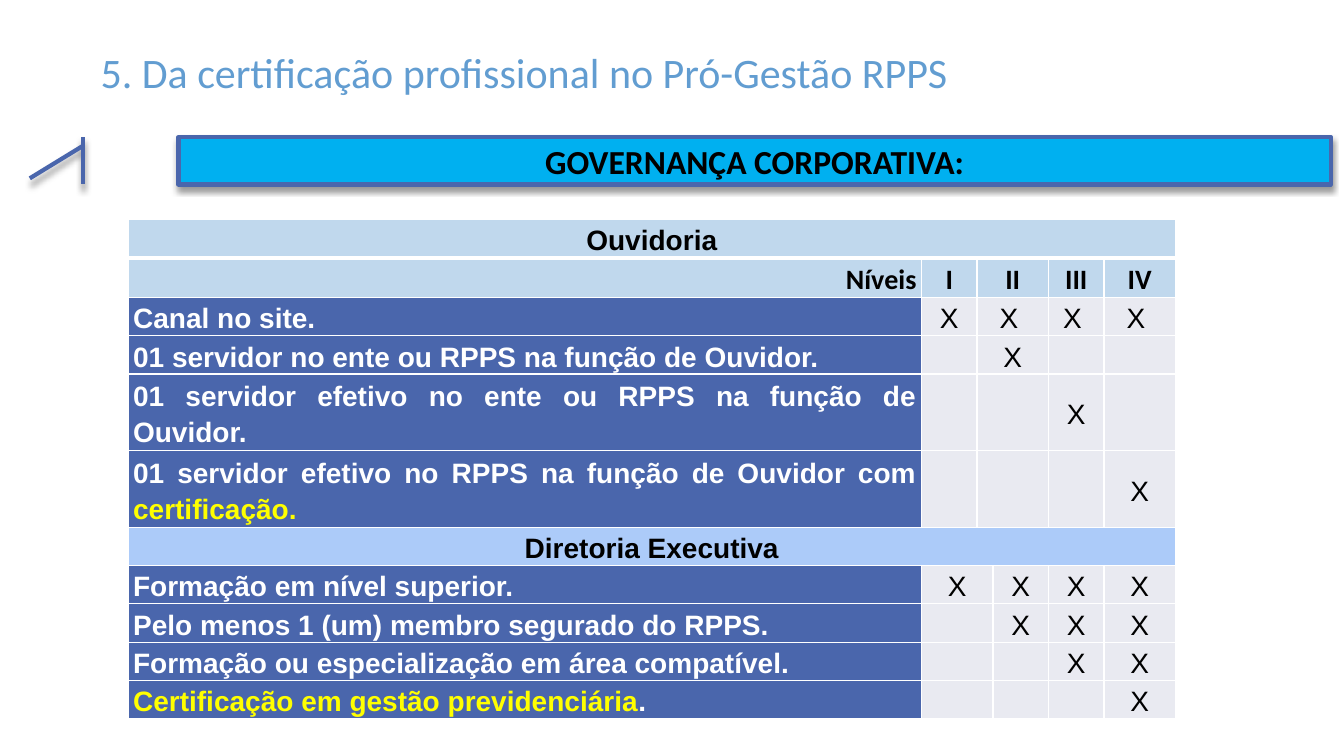
from lxml.etree import SubElement
from pptx import Presentation
from pptx.dml.color import RGBColor
from pptx.enum.shapes import MSO_SHAPE
from pptx.enum.text import MSO_ANCHOR, PP_ALIGN
from pptx.oxml.ns import qn
from pptx.util import Inches, Pt

BLACK = RGBColor(0x00, 0x00, 0x00)
WHITE = RGBColor(0xFF, 0xFF, 0xFF)
YELLOW = RGBColor(0xFF, 0xFF, 0x00)
NAVY = RGBColor(0x4A, 0x66, 0xAC)
CYAN = RGBColor(0x00, 0xB0, 0xF0)
SKY = RGBColor(0x62, 0x9D, 0xD1)
PALE = RGBColor(0xC0, 0xD8, 0xED)
LILAC = RGBColor(0xAC, 0xCB, 0xF9)
GREY = RGBColor(0xE9, 0xEA, 0xF1)

# Content: label runs, then the mark under each level
TITLE = "5. Da certificação profissional no Pró-Gestão RPPS"
BANNER = "GOVERNANÇA CORPORATIVA:"
LEVELS = ["I", "II", "III", "IV"]
OMBUDS = [
    ([("Canal no site.", WHITE)], ["X", "X ", "X ", "X "]),
    ([("01 servidor no ente ou RPPS na função de Ouvidor.", WHITE)],
     ["", "X", "", ""]),
    ([("01 servidor efetivo no ente ou RPPS na função de Ouvidor.", WHITE)],
     ["", "", "X", ""]),
    ([("01 servidor efetivo no RPPS na função de Ouvidor com ", WHITE),
      ("certificação.", YELLOW)], ["", "", "", "X"]),
]
BOARD = [
    ([("Formação em nível superior.", WHITE)], ["X", "X", "X", "X"]),
    ([("Pelo menos 1 (um) membro segurado do RPPS.", WHITE)],
     ["", "X", "X", "X"]),
    ([("Formação ou especialização em área compatível.", WHITE)],
     ["", "", "X", "X"]),
    ([("Certificação em gestão previdenciária", YELLOW), (".", WHITE)],
     ["", "", "", "X"]),
]

# Grid: levels I and II share columns 1 to 3 differently in each section
COLS = [7.87, 0.55, 0.16, 0.55, 0.55, 0.71]
UPPER = [(1, 1), (2, 3), (4, 4), (5, 5)]
LOWER = [(1, 2), (3, 3), (4, 4), (5, 5)]
ROW = 0.38
TALL = {4, 5}
COUNT = 3 + len(OMBUDS) + len(BOARD)


def write(para, runs, size, face, bold, align):
    para.alignment = align
    for text, color in runs:
        run = para.add_run()
        run.text = text
        font = run.font
        font.size, font.name, font.bold = Pt(size), face, bold
        font.color.rgb = color


def edge(cell, side, width):
    line = SubElement(cell._tc.get_or_add_tcPr(), qn("a:ln" + side),
                      w=str(Pt(width)))
    fill = SubElement(line, qn("a:solidFill"))
    SubElement(fill, qn("a:srgbClr"), val=str(WHITE))


def put(row, span, runs, fill, align=PP_ALIGN.CENTER, face="Arial", bold=True):
    first, last = span
    cell = table.cell(row, first)
    if last > first:
        cell.merge(table.cell(row, last))
    for col in range(first, last + 1):
        part = table.cell(row, col)
        part.fill.solid()
        part.fill.fore_color.rgb = fill
    cell.vertical_anchor = MSO_ANCHOR.MIDDLE
    para = cell.text_frame.paragraphs[0]
    runs = [run for run in runs if run[0]]
    if runs:
        para.line_spacing = 1.15
        write(para, runs, 20, face, bold, align)


def section(start, name, fill, items, spans, skip):
    put(start, (0, len(COLS) - 1), [(name, BLACK)], fill)
    for row, (label, marks) in enumerate(items, start + skip):
        put(row, (0, 0), label, NAVY, PP_ALIGN.JUSTIFY)
        for span, mark in zip(spans, marks):
            put(row, span, [(mark, BLACK)], GREY, bold=False)


deck = Presentation()
deck.slide_width, deck.slide_height = Inches(13.33), Inches(7.5)
slide = deck.slides.add_slide(deck.slide_layouts[5])

# Title
title = slide.shapes.title
title.left, title.top = Inches(-0.11), Inches(0.38)
title.width, title.height = Inches(10.62), Inches(0.72)
title.text_frame.vertical_anchor = MSO_ANCHOR.MIDDLE
head = title.text_frame.paragraphs[0]
head.line_spacing = 0.9
write(head, [(TITLE, SKY)], 30, "Calibri", False, PP_ALIGN.CENTER)

# Banner callout with a soft shadow
banner = slide.shapes.add_shape(
    MSO_SHAPE.LINE_CALLOUT_1_BORDER_AND_ACCENT_BAR,
    Inches(1.77), Inches(1.36), Inches(11.43), Inches(0.47))
for i, value in enumerate([0.188, -0.083, 0.872, -0.129]):
    banner.adjustments[i] = round(value, 3)
banner.fill.solid()
banner.fill.fore_color.rgb = CYAN
banner.line.color.rgb = NAVY
banner.line.width = Pt(3)
banner.shadow.inherit = False
glow = SubElement(banner._element.spPr.find(qn("a:effectLst")),
                  qn("a:outerShdw"), blurRad=str(Pt(4)), dist=str(Pt(3)),
                  dir="5400000", rotWithShape="0")
tint = SubElement(glow, qn("a:srgbClr"), val=str(BLACK))
SubElement(tint, qn("a:alpha"), val="40000")
frame = banner.text_frame
frame.margin_left = frame.margin_right = 0
frame.margin_top = frame.margin_bottom = 0
frame.vertical_anchor = MSO_ANCHOR.MIDDLE
write(frame.paragraphs[0], [(BANNER, BLACK)], 24, "Calibri", True,
      PP_ALIGN.CENTER)

# Table grid and borders
high = [ROW * 2 if row in TALL else ROW for row in range(COUNT)]
table = slide.shapes.add_table(
    COUNT, len(COLS), Inches(1.27), Inches(2.18),
    Inches(sum(COLS)), Inches(sum(high))).table
table.first_row = table.horz_banding = False
for col, width in zip(table.columns, COLS):
    col.width = Inches(width)
for row, (line, height) in enumerate(zip(table.rows, high)):
    line.height = Inches(height)
    for cell in line.cells:
        cell.margin_left = cell.margin_right = Inches(0.05)
        cell.margin_top = cell.margin_bottom = 0
        for side in "LRTB":
            thick = (row, side) in [(0, "B"), (1, "T")]
            edge(cell, side, 3 if thick else 1)

# Table text
section(0, "Ouvidoria", PALE, OMBUDS, UPPER, 2)
put(1, (0, 0), [("Níveis", BLACK)], PALE, PP_ALIGN.RIGHT, "Calibri")
for span, level in zip(UPPER, LEVELS):
    put(1, span, [(level, BLACK)], PALE, face="Calibri")
section(2 + len(OMBUDS), "Diretoria Executiva", LILAC, BOARD, LOWER, 1)

deck.save("out.pptx")
